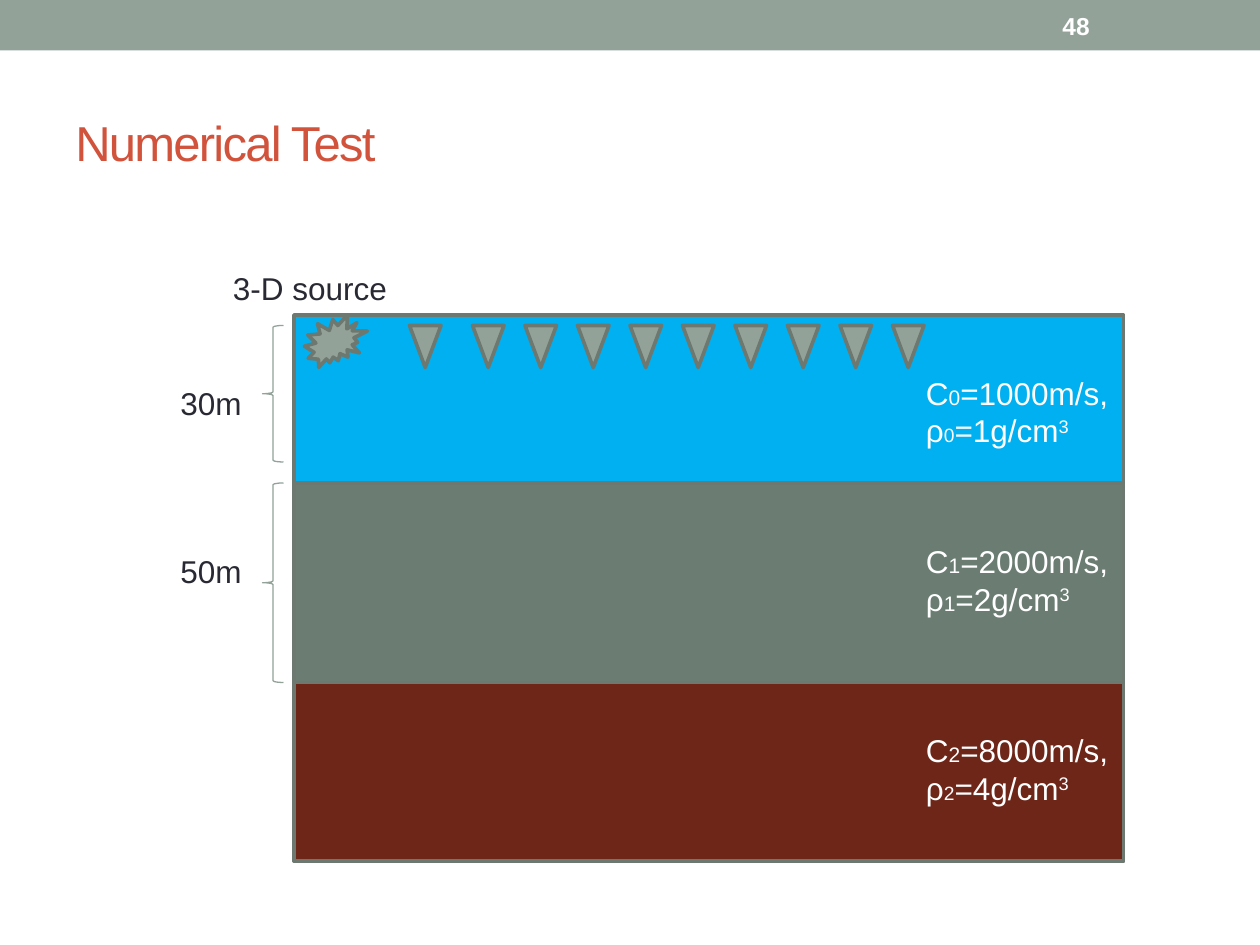
import pptx
import pptx.dml.color
import pptx.enum.shapes
import pptx.enum.text
import pptx.util

Pt = pptx.util.Pt
SHAPE = pptx.enum.shapes.MSO_SHAPE
ANCHOR = pptx.enum.text.MSO_ANCHOR
SAGE, SAGE_DARK, INK, WHITE = "93A299", "6D7871", "292934", "FFFFFF"


def add_shape(parent, kind, box, fill=None, line=None, line_width=2.08):
    shape = parent.add_shape(kind, *[Pt(value) for value in box])
    shape.shadow.inherit = False
    if fill:
        shape.fill.solid()
        shape.fill.fore_color.rgb = pptx.dml.color.RGBColor.from_string(fill)
    else:
        shape.fill.background()
    if line:
        shape.line.color.rgb = pptx.dml.color.RGBColor.from_string(line)
        shape.line.width = Pt(line_width)
    else:
        shape.line.fill.background()


def add_text(parent, box, paragraphs, color, anchor=ANCHOR.TOP):
    """Each paragraph is a list of (text, size) runs; the runs are returned."""
    text_frame = parent.add_textbox(*[Pt(value) for value in box]).text_frame
    text_frame.word_wrap = True
    text_frame.vertical_anchor = anchor
    runs = []
    for index, parts in enumerate(paragraphs):
        paragraph = text_frame.add_paragraph() if index else text_frame.paragraphs[0]
        for text, size in parts:
            run = paragraph.add_run()
            run.text = text
            run.font.name = "Arial"
            run.font.size = Pt(size)
            run.font.color.rgb = pptx.dml.color.RGBColor.from_string(color)
            runs.append(run)
    return runs


presentation = pptx.Presentation()
presentation.slide_width = Pt(720)
presentation.slide_height = Pt(540)
slide = presentation.slides.add_slide(presentation.slide_layouts[6])

# Top band, title and page number
add_shape(slide.shapes, SHAPE.RECTANGLE, (0, 0, 720, 28.8), SAGE)
title_runs = add_text(slide.shapes, (36, 42, 648, 78), [[("Numerical Test", 28)]],
                      "D2533C", ANCHOR.MIDDLE)
title_runs[0].font._element.set("spc", "-100")
number_runs = add_text(slide.shapes, (600, 1.5, 84, 26), [[("48", 14)]],
                       WHITE, ANCHOR.MIDDLE)
number_runs[0].font.bold = True

diagram = slide.shapes.add_group_shape().shapes

# Layers; the water rectangle reaches behind the other two
for top, height, fill in [(180, 312, "00B0F0"), (276, 114, "6B7D72"), (390, 102, "6E2619")]:
    add_shape(diagram, SHAPE.RECTANGLE, (168, top, 474, height), fill, SAGE_DARK)

# Depth braces and labels
for top, height, label_top, label in [(186, 78, 216, "30m"), (276, 114, 312, "50m")]:
    add_shape(diagram, SHAPE.LEFT_BRACE, (150, top, 12, height), None, SAGE, 0.75)
    add_text(diagram, (96, label_top, 72, 29), [[(label, 18)]], INK)

# Velocity and density of each layer
properties = [
    (210, [[("C", 18), ("0", 12), ("=1000m/s, ρ", 18), ("0", 11), ("=1g/cm", 18), ("3", 18)]]),
    (306, [[("C", 18), ("1", 12), ("=2000m/s,", 18)],
           [("ρ", 18), ("1", 12), ("=2g/cm", 18), ("3", 18)]]),
    (414, [[("C", 18), ("2", 12), ("=8000m/s,", 18)],
           [("ρ", 18), ("2", 11), ("=4g/cm", 18), ("3", 18)]]),
]
for top, paragraphs in properties:
    runs = add_text(diagram, (522, top, 120, 51), paragraphs, WHITE)
    runs[-1].font._element.set("baseline", "30000")

# Source and receivers; the first receiver stands slightly apart
add_shape(diagram, SHAPE.EXPLOSION2, (174, 180, 36, 30), SAGE, SAGE_DARK)
for left in [234, *range(270, 511, 30)]:
    add_shape(diagram, SHAPE.FLOWCHART_MERGE, (left, 186, 18, 24), SAGE, SAGE_DARK)
add_text(diagram, (126, 150, 120, 29), [[("3-D source", 18)]], INK)

presentation.save("out.pptx")
